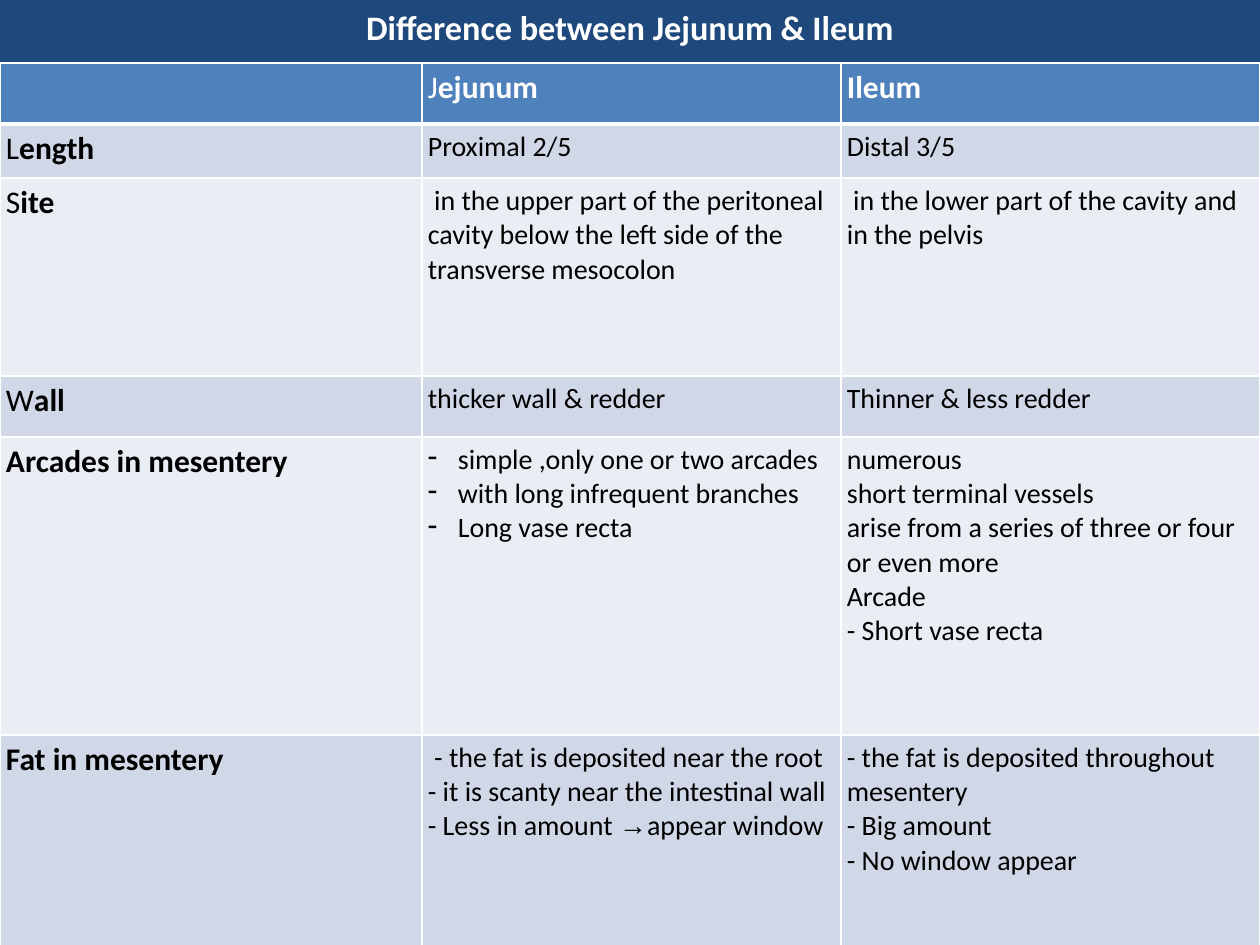
from lxml import etree
from pptx import Presentation
from pptx.dml.color import RGBColor
from pptx.enum.text import MSO_ANCHOR, PP_ALIGN
from pptx.oxml.ns import qn
from pptx.util import Emu, Pt

MID = MSO_ANCHOR.MIDDLE
MID_X = PP_ALIGN.CENTER
LEFT = PP_ALIGN.LEFT
INK = {"navy": "1F497D", "head": "4F81BD", "odd": "D0D8E8",
       "even": "E9EDF4", "white": "FFFFFF", "black": "000000"}


def px(n):
    return Emu(round(n * 914400 / 126))


def write(par, text, size, bold, ink, face="Calibri"):
    run = par.add_run()
    run.text = text
    form = {"size": Pt(size), "bold": bold, "name": face}
    for key, val in form.items():
        setattr(run.font, key, val)
    run.font.color.rgb = RGBColor.from_string(INK[ink])


deck = Presentation()
deck.slide_width, deck.slide_height = px(1260), px(945)
slide = deck.slides.add_slide(deck.slide_layouts[6])
back = slide.background.fill
back.solid()
back.fore_color.rgb = RGBColor.from_string(INK["navy"])

title = slide.shapes.add_textbox(px(63), px(0), px(1134), px(53)).text_frame
form = {"word_wrap": True, "vertical_anchor": MID, "margin_left": 0,
        "margin_right": 0, "margin_top": 0, "margin_bottom": 0}
for key, val in form.items():
    setattr(title, key, val)
title.paragraphs[0].alignment = MID_X
write(title.paragraphs[0], "Difference between Jejunum & Ileum", 19.6, True, "white")

rows = [
    ("", "J|ejunum", "|Ileum"),
    ("L|ength", ["Proximal 2/5"], ["Distal 3/5"]),
    ("S|ite",
     [" in the upper part of the peritoneal cavity below the left side of the "
      "transverse mesocolon"],
     [" in the lower part of the cavity and in the pelvis"]),
    ("W|all", ["thicker wall & redder"], ["Thinner & less redder"]),
    ("|Arcades in mesentery",
     ["•simple ,only one or two arcades", "•with long infrequent branches",
      "•Long vase recta"],
     ["numerous", "short terminal vessels",
      "arise from a series of three or four or even more", "Arcade",
      "- Short vase recta"]),
    ("|Fat in mesentery",
     [" - the fat is deposited near the root",
      "- it is scanty near the intestinal wall",
      "- Less in amount →appear window"],
     ["- the fat is deposited throughout mesentery", "- Big amount",
      "- No window appear"]),
]
wide = [422, 419, 419]
high = [61, 54, 198, 61, 298, 214]
grid = slide.shapes.add_table(len(rows), len(wide), px(0), px(63),
                              px(sum(wide)), px(sum(high))).table
for col, w in zip(grid.columns, wide):
    col.width = px(w)
for row, h in zip(grid.rows, high):
    row.height = px(h)

form = {"margin_left": px(6), "margin_right": px(6),
        "margin_top": px(6), "margin_bottom": px(6)}
for r, row in enumerate(rows):
    tint = "head" if r == 0 else "odd" if r % 2 else "even"
    for c, body in enumerate(row):
        cell = grid.cell(r, c)
        for key, val in form.items():
            setattr(cell, key, val)
        cell.fill.solid()
        cell.fill.fore_color.rgb = RGBColor.from_string(INK[tint])

        thick = {"L": 1, "R": 1, "T": 3 if r == 1 else 1, "B": 3 if r == 0 else 1}
        prop = cell._tc.get_or_add_tcPr()
        for i, (side, pts) in enumerate(thick.items()):
            line = etree.Element(qn("a:ln" + side), w=str(Pt(pts)))
            fill = etree.SubElement(line, qn("a:solidFill"))
            etree.SubElement(fill, qn("a:srgbClr"), val=INK["white"])
            prop.insert(i, line)

        frame = cell.text_frame
        if isinstance(body, str):
            ink = "black" if r else "white"
            frame.paragraphs[0].alignment = LEFT
            for text, bold in zip(body.split("|"), (False, True)):
                if text:
                    write(frame.paragraphs[0], text, 18, bold, ink)
            continue
        for i, text in enumerate(body):
            par = frame.add_paragraph() if i else frame.paragraphs[0]
            par.alignment = LEFT
            if text.startswith("•"):
                text = text[1:]
                prop = par._p.get_or_add_pPr()
                prop.set("marL", str(px(30)))
                prop.set("indent", str(-px(30)))
                etree.SubElement(prop, qn("a:buChar"), char="-")
            start, arrow, end = text.partition("→")
            write(par, start, 16, False, "black")
            if arrow:
                write(par, arrow, 16, False, "black", "Arial")
                write(par, end, 16, False, "black")

deck.save("out.pptx")
